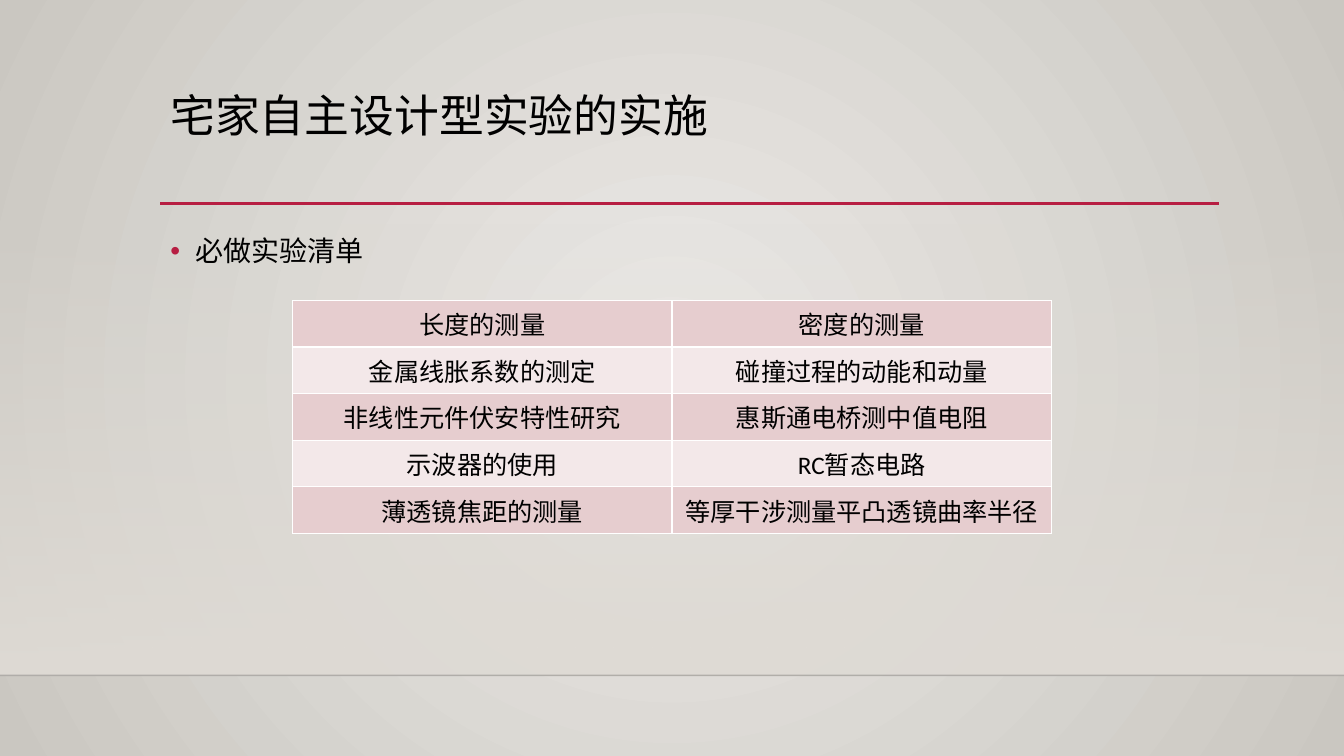
from pptx import Presentation
from pptx.dml.color import RGBColor
from pptx.enum.lang import MSO_LANGUAGE_ID
from pptx.enum.shapes import MSO_CONNECTOR, MSO_SHAPE
from pptx.enum.text import MSO_ANCHOR, MSO_AUTO_SIZE, PP_ALIGN
from pptx.oxml import parse_xml
from pptx.oxml.ns import nsdecls, qn
from pptx.util import Cm, Pt

FONT = "Calibri"
WIDTH, HEIGHT = 33.87, 19.05
LEFT, CONTENT_WIDTH = 4.04, 26.67
FLOOR = 17.02
INK, ACCENT, WHITE = "000000", "B71E42", "FFFFFF"
BANDS = ["E6CDCF", "F3E8E9"]
EXPERIMENTS = [
    ("长度的测量", "密度的测量"),
    ("金属线胀系数的测定", "碰撞过程的动能和动量"),
    ("非线性元件伏安特性研究", "惠斯通电桥测中值电阻"),
    ("示波器的使用", "RC暂态电路"),
    ("薄透镜焦距的测量", "等厚干涉测量平凸透镜曲率半径"),
]


def color(value):
    """Turn a hex string into a colour."""
    return RGBColor.from_string(value)


def element(markup):
    """Build a drawing element from markup without its namespace."""
    name, rest = markup[1:].split(">", 1)
    closed = name.endswith("/")
    name = name.rstrip("/")
    return parse_xml(f"<{name} {nsdecls('a')}{'/' if closed else ''}>{rest}")


def write(frame, text, size, align=PP_ALIGN.LEFT, spacing=1.0):
    """Put one formatted paragraph in a text frame and return it."""
    para = frame.paragraphs[0]
    para.alignment = align
    para.line_spacing = spacing
    para.space_before = Pt(0)
    span = para.add_run()
    span.text = text
    span.font.name = FONT
    span.font.size = Pt(size)
    span.font.color.rgb = color(INK)
    span.font.language_id = MSO_LANGUAGE_ID.SIMPLIFIED_CHINESE
    return para


def add_gradient(owner, fill, stops, direction):
    """Give a fill the stops (position, colour, opacity) and direction."""
    fill.gradient()
    gradient = next(owner.iter(qn("a:gradFill")))
    gradient.clear()
    marks = "".join(
        f'<a:gs pos="{position * 1000}"><a:srgbClr val="{value}">'
        f'<a:alpha val="{opacity * 1000}"/></a:srgbClr></a:gs>'
        for position, value, opacity in stops
    )
    gradient.append(element(f"<a:gsLst>{marks}</a:gsLst>"))
    gradient.append(element(direction))


def add_rule(page, left, top, width, value, weight, opacity=100):
    """Draw a horizontal line."""
    rule = page.shapes.add_connector(
        MSO_CONNECTOR.STRAIGHT, Cm(left), Cm(top), Cm(left + width), Cm(top)
    )
    rule.line.color.rgb = color(value)
    rule.line.width = Pt(weight)
    tint = next(rule.element.iter(qn("a:srgbClr")))
    tint.append(element(f'<a:alpha val="{opacity * 1000}"/>'))
    rule.element.spPr.append(element("<a:effectLst/>"))


def add_backdrop(page, left, top, width, height):
    """Draw the glowing background, the wall shade and the floor line."""
    add_gradient(
        page.element,
        page.background.fill,
        [(0, "ECEAE7", 100), (100, "CAC7C1", 100)],
        '<a:path path="circle"><a:fillToRect l="50000" t="50000" r="50000" b="50000"/></a:path>',
    )
    wall = page.shapes.add_shape(
        MSO_SHAPE.RECTANGLE, Cm(left), Cm(top), Cm(width), Cm(height)
    )
    wall.shadow.inherit = False
    wall.line.fill.background()
    add_gradient(
        wall.element,
        wall.fill,
        [(0, "DFDBD5", 0), (100, "DFDBD5", 100)],
        '<a:lin ang="5400000" scaled="0"/>',
    )
    add_rule(page, left, top + height, width, "000001", 1, opacity=20)


def place(holder, left, top, width, height):
    """Move a placeholder in front and prepare its text frame."""
    holder.left, holder.top = Cm(left), Cm(top)
    holder.width, holder.height = Cm(width), Cm(height)
    holder.element.getparent().append(holder.element)
    frame = holder.text_frame
    frame.word_wrap = True
    frame.auto_size = MSO_AUTO_SIZE.NONE
    frame.vertical_anchor = MSO_ANCHOR.TOP
    return frame


def add_heading(page, left, top, width, height):
    """Fill the title and underline it."""
    add_rule(page, left, top + height - 0.03, width + 0.02, ACCENT, 2.5)
    frame = place(page.shapes.title, left, top, width, height)
    write(frame, "宅家自主设计型实验的实施", 32, spacing=0.9)


def add_list(page, left, top, width, height):
    """Fill the body with its bulleted line."""
    frame = place(page.placeholders[1], left, top, width, height)
    para = write(frame, "必做实验清单", 20, spacing=1.2)
    properties = para._p.get_or_add_pPr()
    properties.set("marL", str(Cm(0.64)))
    properties.set("indent", str(-Cm(0.64)))
    for markup in (
        f'<a:buClr><a:srgbClr val="{ACCENT}"/></a:buClr>',
        '<a:buFont typeface="Arial"/>',
        '<a:buChar char="•"/>',
    ):
        properties.append(element(markup))


def add_experiments(page, left, top, width, height):
    """Draw the banded table of experiments."""
    table = page.shapes.add_table(
        len(EXPERIMENTS), 2, Cm(left), Cm(top), Cm(width), Cm(height)
    ).table
    table.first_row = table.horz_banding = False
    for row, names in enumerate(EXPERIMENTS):
        for column, name in enumerate(names):
            cell = table.cell(row, column)
            write(cell.text_frame, name, 18, align=PP_ALIGN.CENTER)
            properties = cell._tc.get_or_add_tcPr()
            for side in ("lnL", "lnR", "lnT", "lnB"):
                properties.append(element(
                    f'<a:{side}><a:solidFill><a:srgbClr val="{WHITE}"/></a:solidFill></a:{side}>'
                ))
                properties[-1].set("w", str(Pt(1)))
            cell.fill.solid()
            cell.fill.fore_color.rgb = color(BANDS[row % 2])


def main():
    """Build and save the deck."""
    deck = Presentation()
    deck.slide_width, deck.slide_height = Cm(WIDTH), Cm(HEIGHT)
    page = deck.slides.add_slide(deck.slide_layouts[1])
    add_backdrop(page, 0, 5.61, WIDTH, FLOOR - 5.61)
    add_heading(page, LEFT, 2.24, CONTENT_WIDTH, 2.92)
    add_list(page, LEFT, 5.59, CONTENT_WIDTH, 9.58)
    add_experiments(page, 7.37, 7.57, 19.13, 5.15)
    deck.save("out.pptx")


if __name__ == "__main__":
    main()
